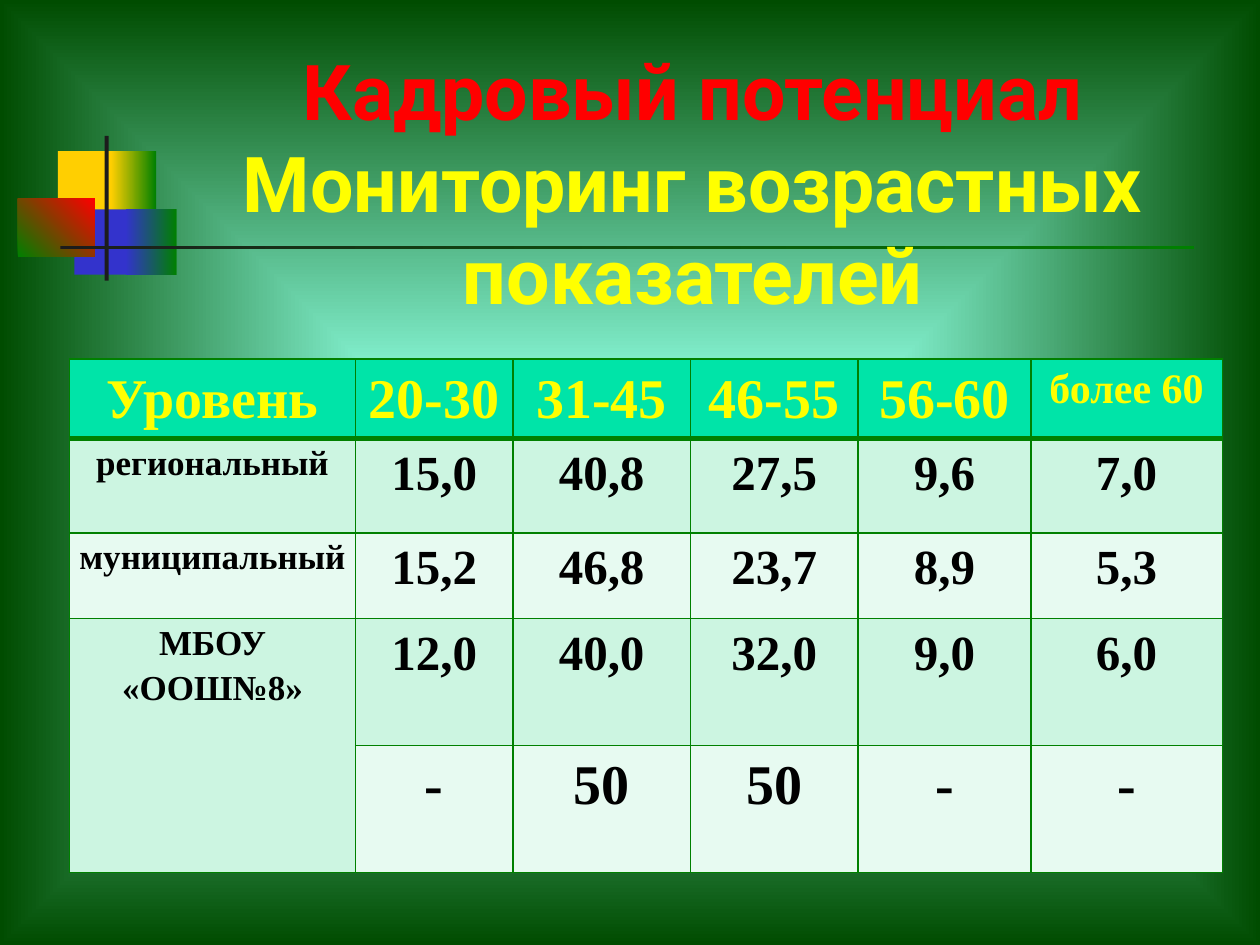
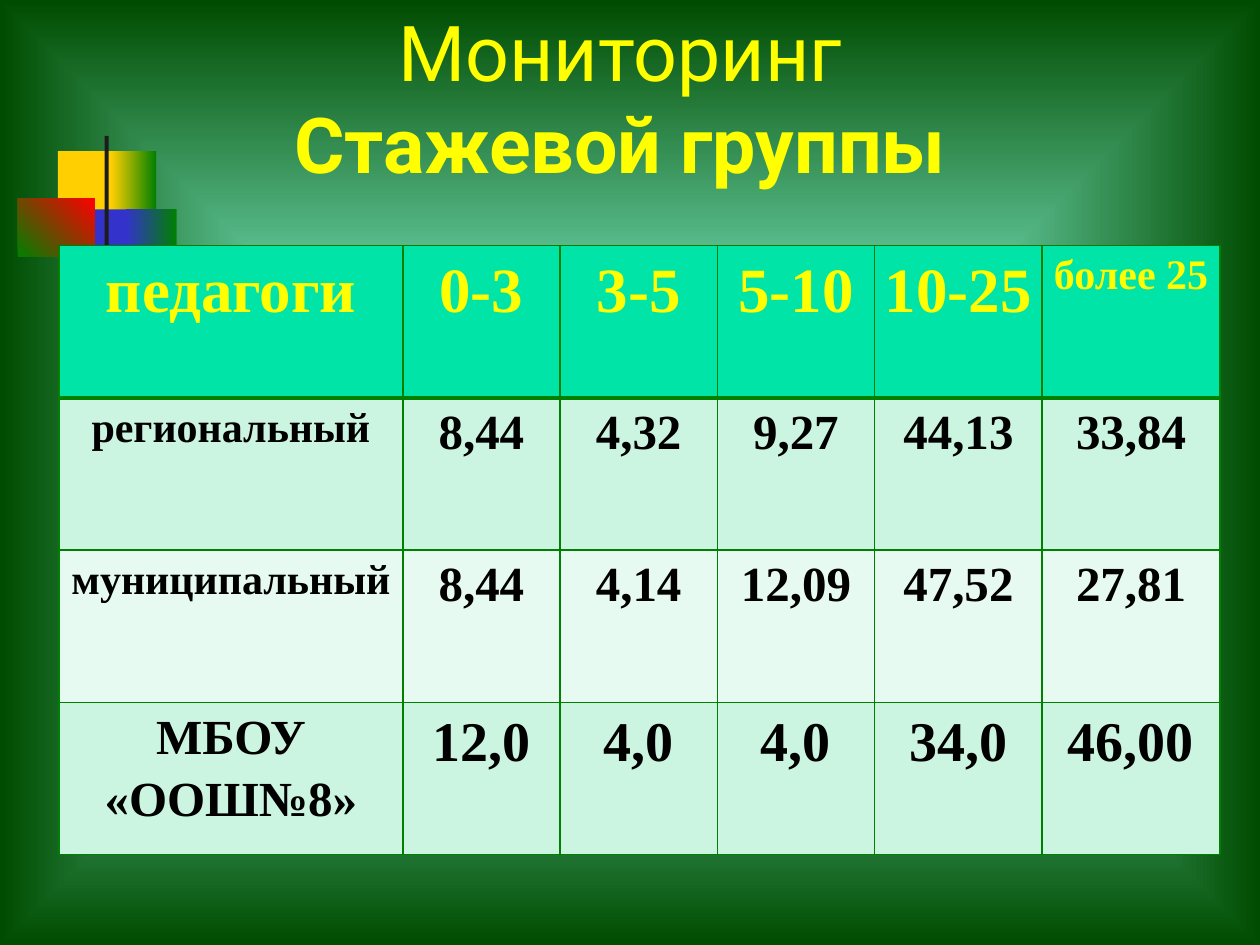
"""Build two slides that compare teaching staff by age and by length of service."""
from dataclasses import dataclass

from lxml import etree
from pptx import Presentation
from pptx.dml.color import RGBColor
from pptx.enum.shapes import MSO_SHAPE
from pptx.enum.text import MSO_ANCHOR, PP_ALIGN
from pptx.oxml.ns import qn
from pptx.util import Cm, Pt

RECTANGLE = MSO_SHAPE.RECTANGLE
BOTTOM = MSO_ANCHOR.BOTTOM
TOP = MSO_ANCHOR.TOP
CENTER = PP_ALIGN.CENTER


@dataclass(frozen=True)
class Theme:
    mint: str = "8EFFE1"
    forest: str = "004C00"
    green: str = "008000"
    gold: str = "FFCF01"
    blue: str = "3333CC"
    red: str = "FF0000"
    yellow: str = "FFFF00"
    ink: str = "1C1C1C"
    black: str = "000000"
    header: str = "00E4A8"
    bands: tuple = ("CCF5E1", "E7FAF1")
    title_font: str = "Roboto"
    table_font: str = "Times New Roman"
    title_size: int = 44
    last_header_size: int = 24
    thin: int = 1
    thick: int = 3


THEME = Theme()

ORNAMENT = [
    ((1.17, 3.05, 1.22, 1.32), (THEME.gold,), 0),
    ((2.24, 3.05, 0.91, 1.32), (THEME.gold, THEME.green), 0),
    ((1.5, 4.22, 1.17, 1.32), (THEME.blue,), 0),
    ((2.54, 4.22, 1.02, 1.32), (THEME.blue, THEME.green), 0),
    ((0.36, 4.01, 1.55, 1.17), (THEME.green, THEME.red), 45),
    ((2.11, 2.74, 0.08, 2.92), (THEME.ink,), 0),
    ((1.22, 4.95, 22.86, 0.08), (THEME.ink, THEME.green), 0),
]

SLIDES = [
    {
        "title_place": (2.54, 1.78, 22.86, 4.8),
        "title": [
            ("Кадровый потенциал", THEME.red, True),
            ("Мониторинг возрастных показателей", THEME.yellow, True),
        ],
        "table_corner": (1.4, 7.24),
        "widths": [5.77, 3.17, 3.58, 3.38, 3.48, 3.86],
        "heights": [1.6, 1.9, 1.73, 2.56, 2.56],
        "rows": [
            ("Уровень", ["20-30", "31-45", "46-55", "56-60", "более 60"]),
            ("региональный", ["15,0", "40,8", "27,5", "9,6", "7,0"]),
            ("муниципальный", ["15,2", "46,8", "23,7", "8,9", "5,3"]),
            ("МБОУ «ООШ№8»", ["12,0", "40,0", "32,0", "9,0", "6,0"]),
            (None, ["-", "50", "50", "-", "-"]),
        ],
        "sizes": [(32, 32), (20, 28), (20, 28), (20, 28), (20, 32)],
    },
    {
        "title_place": (1.27, 0.76, 22.86, 3.18),
        "title": [
            ("Мониторинг ", THEME.yellow, False),
            ("Стажевой группы ", THEME.yellow, True),
        ],
        "table_corner": (1.19, 4.95),
        "widths": [6.93, 3.17, 3.17, 3.17, 3.38, 3.58],
        "heights": [3.07] * 4,
        "rows": [
            ("педагоги", ["0-3", "3-5", "5-10", "10-25", "более 25"]),
            ("региональный", ["8,44", "4,32", "9,27", "44,13", "33,84"]),
            ("муниципальный", ["8,44", "4,14", "12,09", "47,52", "27,81"]),
            ("МБОУ «ООШ№8»", ["12,0", "4,0", "4,0", "34,0", "46,00"]),
        ],
        "sizes": [(36, 36), (24, 28), (24, 28), (28, 32)],
    },
]


def rgb(value):
    return RGBColor.from_string(value)


def paint(fill, colours, angle=0):
    if len(colours) == 1:
        fill.solid()
        fill.fore_color.rgb = rgb(colours[0])
        return
    fill.gradient()
    fill.gradient_angle = angle
    for stop, colour in zip(fill.gradient_stops, colours):
        stop.color.rgb = rgb(colour)


def paint_background(page):
    fill = page.background.fill
    paint(fill, (THEME.mint, THEME.forest))
    fill.gradient_stops[0].position = 0.15
    fill.gradient_stops[1].position = 1
    gradient = page.element.find(".//" + qn("a:gradFill"))
    gradient.remove(gradient.find(qn("a:lin")))
    route = etree.SubElement(gradient, qn("a:path"), {"path": "shape"})
    etree.SubElement(route, qn("a:fillToRect"), dict.fromkeys("ltrb", "50000"))


def add_ornament(page):
    for place, colours, angle in ORNAMENT:
        block = page.shapes.add_shape(RECTANGLE, *map(Cm, place))
        block.shadow.inherit = False
        block.line.fill.background()
        paint(block.fill, colours, angle)


def add_title(page, place, lines):
    box = page.shapes.add_textbox(*map(Cm, place))
    box.text_frame.word_wrap = True
    box.text_frame.vertical_anchor = BOTTOM
    para = box.text_frame.paragraphs[0]
    para.alignment = CENTER
    para.font.name = THEME.title_font
    para.font.size = Pt(THEME.title_size)
    for number, (text, colour, bold) in enumerate(lines):
        if number:
            para.add_line_break()
        span = para.add_run()
        span.text = text
        span.font.size = Pt(THEME.title_size)
        span.font.bold = bold
        span.font.color.rgb = rgb(colour)


def add_borders(cell, top, bottom):
    properties = cell._tc.get_or_add_tcPr()
    widths = {"lnL": THEME.thin, "lnR": THEME.thin, "lnT": top, "lnB": bottom}
    for side, width in widths.items():
        line = etree.SubElement(properties, qn("a:" + side), {"w": str(Pt(width))})
        fill = etree.SubElement(line, qn("a:solidFill"))
        etree.SubElement(fill, qn("a:srgbClr"), {"val": THEME.green})


def style_cell(cell, row, size):
    cell.margin_left = cell.margin_right = Cm(0.17)
    cell.margin_top = cell.margin_bottom = 0
    cell.vertical_anchor = TOP
    add_borders(
        cell,
        THEME.thick if row == 1 else THEME.thin,
        THEME.thick if row == 0 else THEME.thin,
    )
    paint(cell.fill, (THEME.bands[(row - 1) % 2] if row else THEME.header,))
    para = cell.text_frame.paragraphs[0]
    para.alignment = CENTER
    para.line_spacing = 1.15
    para.font.name = THEME.table_font
    para.font.size = Pt(size)
    para.font.bold = True
    para.font.color.rgb = rgb(THEME.black if row else THEME.yellow)


def add_staff_table(page, content):
    widths, heights = content["widths"], content["heights"]
    frame = page.shapes.add_table(
        len(heights), len(widths), *map(Cm, content["table_corner"]),
        Cm(sum(widths)), Cm(sum(heights)),
    )
    table = frame.table
    table.first_row = table.horz_banding = False
    for column, width in zip(table.columns, widths):
        column.width = Cm(width)
    for line, height in zip(table.rows, heights):
        line.height = Cm(height)
    for row, (label, values) in enumerate(content["rows"]):
        label_size, value_size = content["sizes"][row]
        sizes = [label_size] + [value_size] * len(values)
        if row == 0:
            sizes[-1] = THEME.last_header_size
        for column, (text, size) in enumerate(zip([label, *values], sizes)):
            cell = table.cell(row, column)
            cell.text = text or ""
            style_cell(cell, row, size)
        if label is None:
            table.cell(row - 1, 0).merge(table.cell(row, 0))


def main():
    deck = Presentation()
    deck.slide_width, deck.slide_height = Cm(25.4), Cm(19.05)
    for content in SLIDES:
        page = deck.slides.add_slide(deck.slide_layouts[6])
        paint_background(page)
        add_ornament(page)
        add_title(page, content["title_place"], content["title"])
        add_staff_table(page, content)
    deck.save("out.pptx")


if __name__ == "__main__":
    main()
